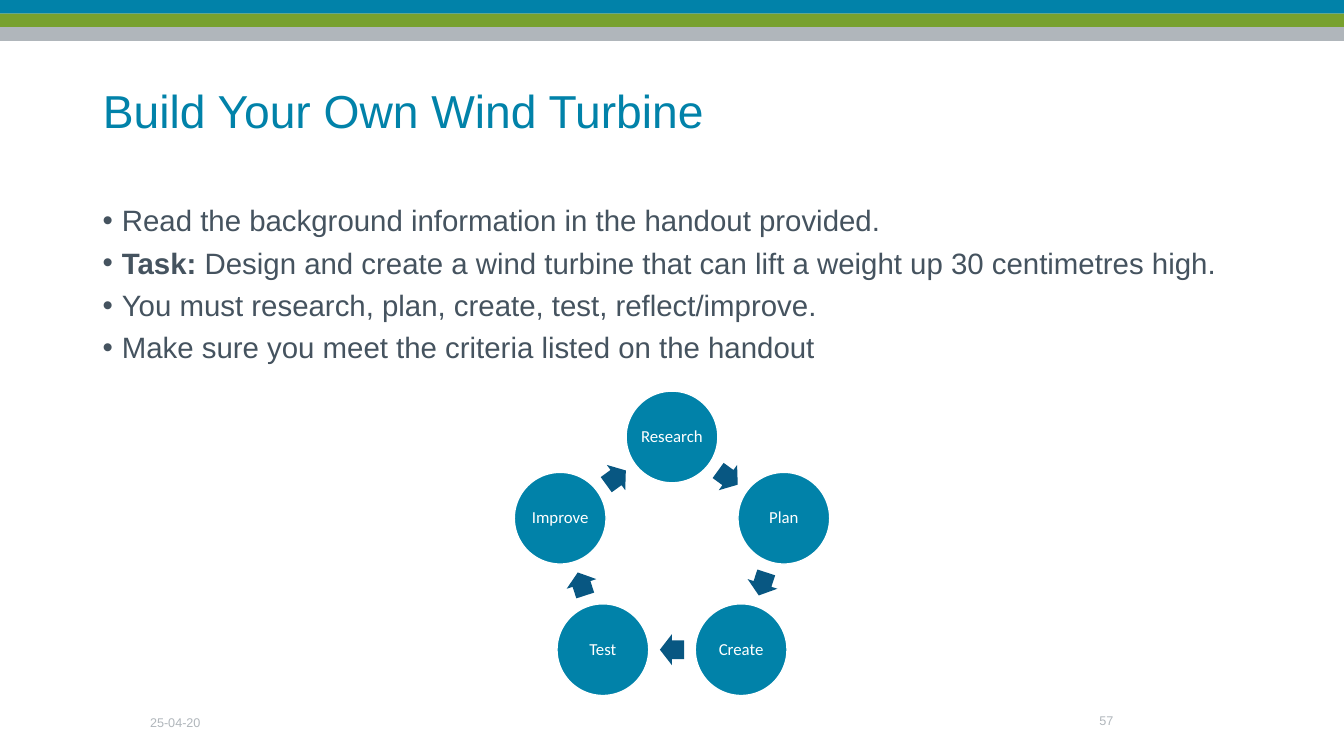
import math

from lxml import etree
from pptx import Presentation
from pptx.dml.color import RGBColor
from pptx.enum import shapes, text
from pptx.oxml import ns
from pptx.util import Inches, Pt

TEAL = RGBColor(0x01, 0x82, 0xA9)
GREEN = RGBColor(0x78, 0xA1, 0x2E)
GREY = RGBColor(0xB0, 0xB6, 0xBB)
SLATE = RGBColor(0x45, 0x53, 0x5F)
NAVY = RGBColor(0x08, 0x57, 0x82)
WHITE = RGBColor(0xFF, 0xFF, 0xFF)

BULLETS = [
    [("Read the background information in the handout provided.", False)],
    [("Task:", True),
     (" Design and create a wind turbine that can lift a weight up 30 centimetres high.", False)],
    [("You must research, plan, create, test, reflect/improve.", False)],
    [("Make sure you meet the criteria listed on the handout", False)],
]
STEPS = ["Research", "Plan", "Create", "Test", "Improve"]


def style(font, size, color, name="Arial"):
    """Set the size, colour and typeface of a font."""
    font.size, font.name = Pt(size), name
    font.color.rgb = color


def add_solid(slide, kind, left, top, width, height, fill):
    """Add a flat preset shape without an outline."""
    sp = slide.shapes.add_shape(
        kind, Inches(left), Inches(top), Inches(width), Inches(height))
    sp.shadow.inherit = False
    sp.fill.solid()
    sp.fill.fore_color.rgb = fill
    sp.line.fill.background()
    return sp


def add_text_box(slide, left, top, width, height):
    """Add a wrapping text box and return its text frame."""
    box = slide.shapes.add_textbox(
        Inches(left), Inches(top), Inches(width), Inches(height))
    box.text_frame.word_wrap = True
    return box.text_frame


def add_header(slide, width, band):
    """Stack the three colour bands across the top."""
    for i, color in enumerate((TEAL, GREEN, GREY)):
        add_solid(slide, shapes.MSO_SHAPE.RECTANGLE, 0, i * band, width, band, color)


def add_title(slide, left, top, width, height):
    """Place and format the title placeholder."""
    title = slide.shapes.title
    title.left, title.top = Inches(left), Inches(top)
    title.width, title.height = Inches(width), Inches(height)
    tf = title.text_frame
    tf.text = "Build Your Own Wind Turbine"
    tf.auto_size = text.MSO_AUTO_SIZE.NONE
    tf.vertical_anchor = text.MSO_ANCHOR.MIDDLE
    p = tf.paragraphs[0]
    p.alignment = text.PP_ALIGN.LEFT
    p.line_spacing = 0.9
    style(p.runs[0].font, 33, TEAL)


def add_bullets(slide, left, top, width, height):
    """Write the task instructions as a bulleted list."""
    tf = add_text_box(slide, left, top, width, height)
    for i, parts in enumerate(BULLETS):
        p = tf.add_paragraph() if i else tf.paragraphs[0]
        p.line_spacing = 0.9
        p.space_before = Pt(7.5 if i else 0)
        pPr = p._p.get_or_add_pPr()
        pPr.set("marL", str(Inches(0.19)))
        pPr.set("indent", str(-Inches(0.19)))
        etree.SubElement(pPr, ns.qn("a:buFont")).set("typeface", "Arial")
        etree.SubElement(pPr, ns.qn("a:buChar")).set("char", "•")
        for words, bold in parts:
            r = p.add_run()
            r.text = words
            r.font.bold = bold
            style(r.font, 21, SLATE)


def add_cycle(slide, left, top, width, height, circle=0.91):
    """Arrange the design steps clockwise with arrows between them."""
    turn = 2 * math.pi / len(STEPS)
    radius = (height - circle) / (1 + math.cos(turn / 2))
    center_x, center_y = left + width / 2, top + circle / 2 + radius
    arrow_radius = radius * math.cos(turn / 2)
    arrow_w, arrow_h = 0.24, 0.31
    for i, step in enumerate(STEPS):
        angle = i * turn
        x = center_x + radius * math.sin(angle)
        y = center_y - radius * math.cos(angle)
        sp = add_solid(slide, shapes.MSO_SHAPE.OVAL,
                       x - circle / 2, y - circle / 2, circle, circle, TEAL)
        sp.line.color.rgb = WHITE
        sp.line.width = Pt(1)
        tf = sp.text_frame
        tf.text = step
        tf.word_wrap = False
        tf.vertical_anchor = text.MSO_ANCHOR.MIDDLE
        tf.margin_left = tf.margin_right = tf.margin_top = tf.margin_bottom = Inches(0.02)
        p = tf.paragraphs[0]
        p.alignment = text.PP_ALIGN.CENTER
        p.line_spacing = 0.9
        style(p.runs[0].font, 12, WHITE, "Calibri")

        angle += turn / 2
        x = center_x + arrow_radius * math.sin(angle)
        y = center_y - arrow_radius * math.cos(angle)
        arrow = add_solid(slide, shapes.MSO_SHAPE.RIGHT_ARROW,
                          x - arrow_w / 2, y - arrow_h / 2, arrow_w, arrow_h, NAVY)
        arrow.rotation = math.degrees(angle)
        arrow.adjustments[0] = 0.6
        arrow.adjustments[1] = 0.5


def add_footer(slide, words, align, left, top, width, height):
    """Add one small grey footer entry."""
    tf = add_text_box(slide, left, top, width, height)
    tf.text = words
    tf.vertical_anchor = text.MSO_ANCHOR.MIDDLE
    p = tf.paragraphs[0]
    p.alignment = align
    style(p.runs[0].font, 9, GREY)


def main():
    """Build and save the wind turbine slide."""
    prs = Presentation()
    prs.slide_width, prs.slide_height = Inches(13.33), Inches(7.5)
    slide = prs.slides.add_slide(prs.slide_layouts[5])
    add_header(slide, 13.33, 0.135)
    add_title(slide, 0.92, 0.4, 11.5, 1.45)
    add_bullets(slide, 0.92, 2, 11.5, 1.8)
    add_cycle(slide, 5.1, 3.88, 3.13, 3.02)
    add_footer(slide, "25-04-20", text.PP_ALIGN.LEFT, 1.39, 6.98, 2.53, 0.37)
    add_footer(slide, "57", text.PP_ALIGN.RIGHT, 9.42, 6.95, 1.72, 0.4)
    prs.save("out.pptx")


if __name__ == "__main__":
    main()
